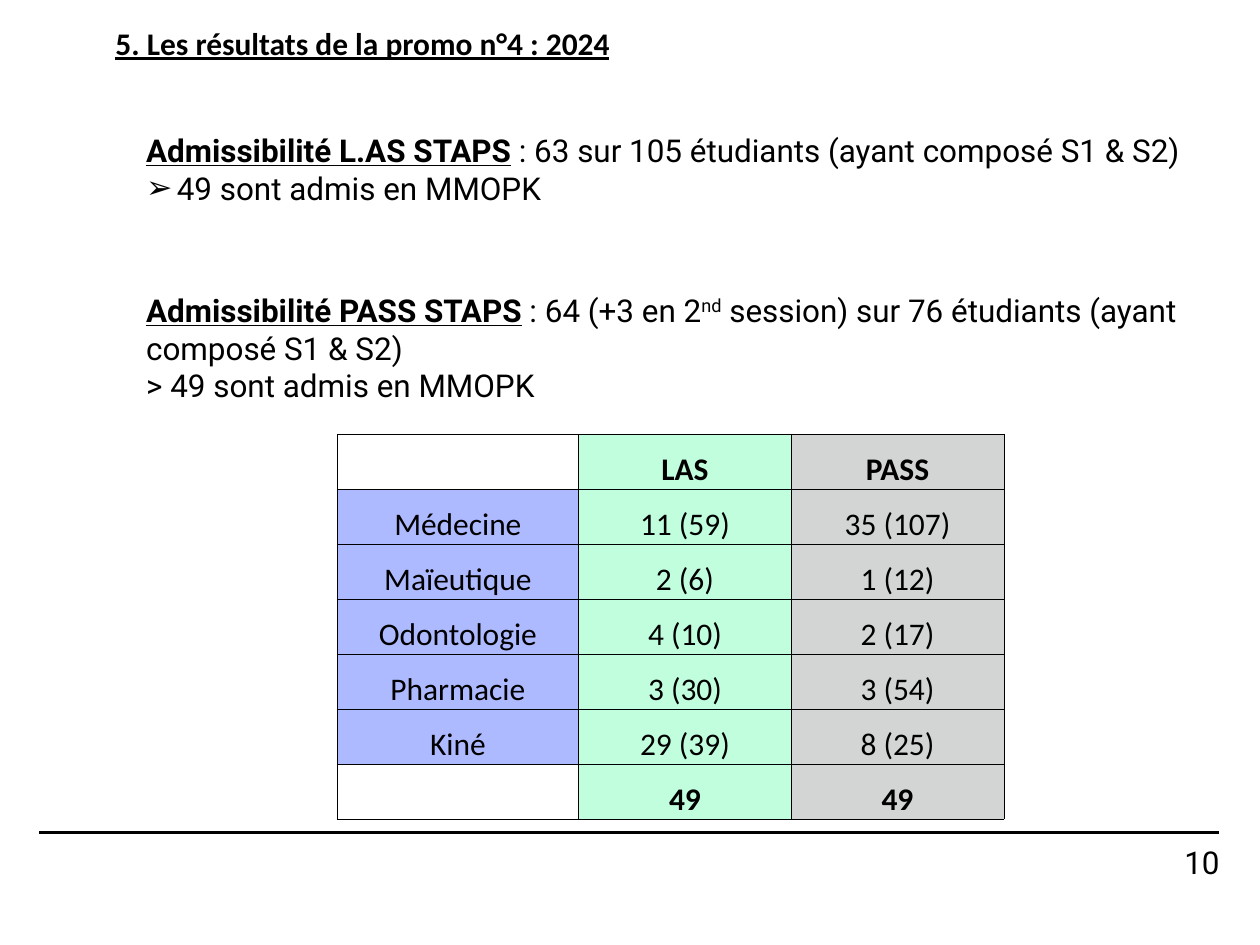
from lxml.etree import SubElement
from pptx import Presentation
from pptx.dml.color import RGBColor
from pptx.enum.shapes import MSO_CONNECTOR as Connector
from pptx.enum.text import MSO_ANCHOR as Anchor, PP_ALIGN as Align
from pptx.oxml.ns import qn
from pptx.util import Inches, Pt

COLORS = {"ink": "000000", "label": "AEBAFF", "las": "C1FEDE", "pass": "D3D4D4"}
BODY, HEADING = "Roboto", "Calibri"
RESULTS = [
    ("", "LAS", "PASS"),
    ("Médecine", "11 (59)", "35 (107)"),
    ("Maïeutique", "2 (6)", "1 (12)"),
    ("Odontologie", "4 (10)", "2 (17)"),
    ("Pharmacie", "3 (30)", "3 (54)"),
    ("Kiné", "29 (39)", "8 (25)"),
    ("", "49", "49"),
]


def color(name):
    return RGBColor.from_string(COLORS[name])


def add_span(para, text, font=BODY, bold=False, underline=False, raised=False):
    span = para.add_run()
    span.text = text
    span.font.name = font
    span.font.size = Pt(28)
    span.font.bold = bold
    span.font.underline = underline
    span.font.color.rgb = color("ink")
    if raised:
        span._r.get_or_add_rPr().set("baseline", "30000")


def add_box(page, left, top, width, height):
    box = page.shapes.add_textbox(Inches(left), Inches(top), Inches(width), Inches(height))
    box.text_frame.word_wrap = True
    return box.text_frame


def add_bullet(para, symbol):
    properties = para._p.get_or_add_pPr()
    properties.set("marL", str(Inches(0.38)))
    properties.set("indent", str(Inches(-0.38)))
    SubElement(properties, qn("a:buFont"), typeface="Arial")
    SubElement(properties, qn("a:buChar"), char=symbol)


def add_admission(page, top, height, label, details, result, bullet=None):
    """Details are (text, raised) pairs."""
    frame = add_box(page, 1.71, top, 13.7, height)
    para = frame.paragraphs[0]
    add_span(para, label, bold=True, underline=True)
    for text, raised in details:
        add_span(para, text, raised=raised)
    para = frame.add_paragraph()
    if bullet:
        add_bullet(para, bullet)
    add_span(para, result)


def add_rule(page, left, right, y):
    rule = page.shapes.add_connector(
        Connector.STRAIGHT, Inches(left), Inches(y), Inches(right), Inches(y))
    rule.line.color.rgb = color("ink")
    rule.line.width = Pt(2)
    SubElement(rule._element.spPr, qn("a:effectLst"))


def add_borders(cell):
    properties = cell._tc.get_or_add_tcPr()
    for side in ("lnL", "lnR", "lnT", "lnB"):
        line = SubElement(properties, qn(f"a:{side}"), w=str(Pt(0.5)))
        fill = SubElement(line, qn("a:solidFill"))
        SubElement(fill, qn("a:srgbClr"), val=COLORS["ink"])


def fill_cell(cell, text, fill, bold):
    add_borders(cell)
    if not text:
        cell.fill.background()
        return
    cell.fill.solid()
    cell.fill.fore_color.rgb = color(fill)
    cell.margin_left = cell.margin_right = cell.margin_top = Inches(0.01)
    cell.margin_bottom = 0
    cell.vertical_anchor = Anchor.BOTTOM
    para = cell.text_frame.paragraphs[0]
    para.alignment = Align.CENTER
    add_span(para, text, HEADING, bold=bold)


def add_results(page):
    widths, row_height = (2.99, 2.63, 2.63), 0.68
    table = page.shapes.add_table(
        len(RESULTS), len(widths), Inches(4.17), Inches(5.37),
        Inches(sum(widths)), Inches(row_height * len(RESULTS))).table
    table.first_row = table.horz_banding = False
    for column, width in zip(table.columns, widths):
        column.width = Inches(width)
    for row_index, values in enumerate(RESULTS):
        table.rows[row_index].height = Inches(row_height)
        bold = row_index in (0, len(RESULTS) - 1)
        for column_index, (text, fill) in enumerate(zip(values, ("label", "las", "pass"))):
            fill_cell(table.cell(row_index, column_index), text, fill, bold)


def add_page_number(page, number):
    frame = add_box(page, 12.8, 10.43, 2.29, 0.47)
    frame.margin_left = frame.margin_right = frame.margin_top = frame.margin_bottom = 0
    frame.vertical_anchor = Anchor.MIDDLE
    para = frame.paragraphs[0]
    para.alignment = Align.RIGHT
    add_span(para, number)


def main():
    deck = Presentation()
    deck.slide_width, deck.slide_height = Inches(15.59), Inches(11.69)
    page = deck.slides.add_slide(deck.slide_layouts[6])

    # Footer
    add_rule(page, 0.48, 15.08, 10.3)
    add_page_number(page, "10")

    # Title
    title = add_box(page, 1.33, 0.3, 11.08, 0.86).paragraphs[0]
    title.line_spacing = 0.9
    add_span(title, "5. Les résultats de la promo n°4 : 2024", HEADING, bold=True, underline=True)

    # Admissions by programme
    add_admission(page, 1.57, 1.04, "Admissibilité L.AS STAPS",
                  [(" : 63 sur 105 étudiants (ayant composé S1 & S2)", False)],
                  "49 sont admis en MMOPK", bullet="➢")
    add_admission(page, 3.55, 1.51, "Admissibilité PASS STAPS",
                  [(" : 64 (+3 en 2", False), ("nd", True),
                   (" session) sur 76 étudiants (ayant composé S1 & S2)", False)],
                  "> 49 sont admis en MMOPK")

    # Results table
    add_results(page)

    deck.save("out.pptx")


if __name__ == "__main__":
    main()
